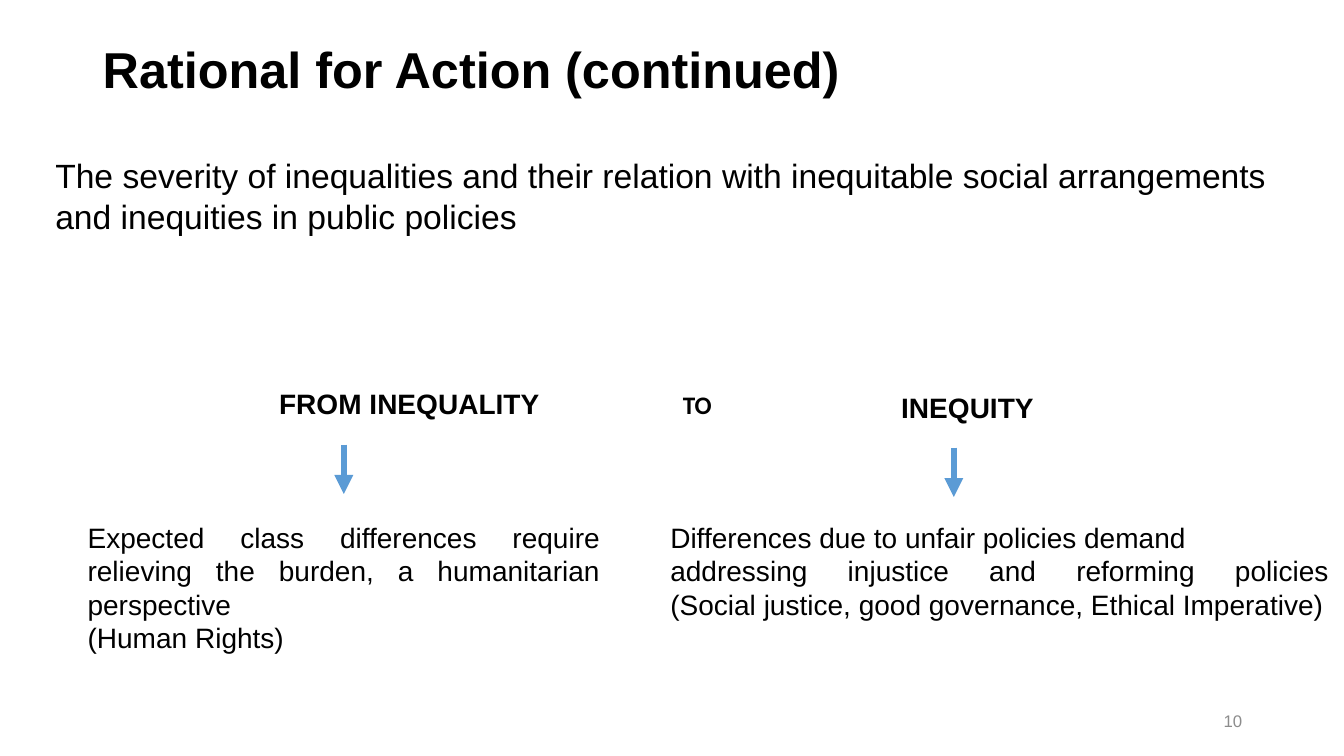
from pptx import Presentation
from pptx.dml.color import RGBColor
from pptx.enum import shapes, text
from pptx.oxml.ns import qn
from pptx.util import Inches, Pt
from lxml import etree

ALIGN = text.PP_ALIGN
ANCHOR = text.MSO_ANCHOR


def rgb(hex_color):
    return RGBColor.from_string(hex_color)


def add_text(s, box, paragraphs, size, bold=False, align=ALIGN.LEFT, color="000000",
             font="Arial", anchor=ANCHOR.TOP, spacing=None):
    tf = s.shapes.add_textbox(*map(Inches, box)).text_frame
    tf.word_wrap = True
    tf.vertical_anchor = anchor
    for i, content in enumerate(paragraphs):
        p = tf.add_paragraph() if i else tf.paragraphs[0]
        p.text = content
        p.alignment = align
        p.line_spacing = spacing
        p.font.name = font
        p.font.size = Pt(size)
        p.font.bold = bold
        p.font.color.rgb = rgb(color)


def add_down_arrow(s, x, top, length=0.49):
    line = s.shapes.add_connector(shapes.MSO_CONNECTOR.STRAIGHT, Inches(x), Inches(top),
                                  Inches(x), Inches(top + length))
    line.line.color.rgb = rgb("5B9BD5")
    line.line.width = Pt(4.5)
    etree.SubElement(line.line._get_or_add_ln(), qn("a:tailEnd"), type="triangle")
    etree.SubElement(line._element.spPr, qn("a:effectLst"))


def main():
    prs = Presentation()
    prs.slide_width, prs.slide_height = Inches(13.33), Inches(7.5)
    s = prs.slides.add_slide(prs.slide_layouts[6])

    add_text(s, (0.92, 0.4, 11.5, 1), ["Rational for Action (continued)"], 36, bold=True,
             spacing=0.9)
    add_text(s, (0.45, 1.49, 12.28, 0.91),
             ["The severity of inequalities and their relation with inequitable social "
              "arrangements and inequities in public policies"], 24)

    add_text(s, (2.67, 3.79, 3.05, 0.44), ["FROM INEQUALITY"], 20, bold=True)
    add_text(s, (6.29, 3.81, 1.25, 0.4), ["TO"], 18, bold=True, align=ALIGN.CENTER,
             font="Calibri")
    add_text(s, (8.84, 3.83, 1.6, 0.44), ["INEQUITY"], 20, bold=True)

    add_down_arrow(s, 3.41, 4.41)
    add_down_arrow(s, 9.46, 4.44)

    add_text(s, (0.77, 5.11, 5.28, 1.45),
             ["Expected class differences require relieving the burden, a humanitarian "
              "perspective", "(Human Rights)"], 20, align=ALIGN.JUSTIFY)
    add_text(s, (6.55, 5.11, 6.73, 1.11),
             ["Differences due to unfair policies demand",
              "addressing injustice and reforming policies\v"
              "(Social justice, good governance, Ethical Imperative)"],
             20, align=ALIGN.JUSTIFY)

    add_text(s, (9.42, 6.95, 3, 0.4), ["10"], 12, align=ALIGN.RIGHT, color="8C8C8C",
             anchor=ANCHOR.MIDDLE)
    prs.save("out.pptx")


if __name__ == "__main__":
    main()
